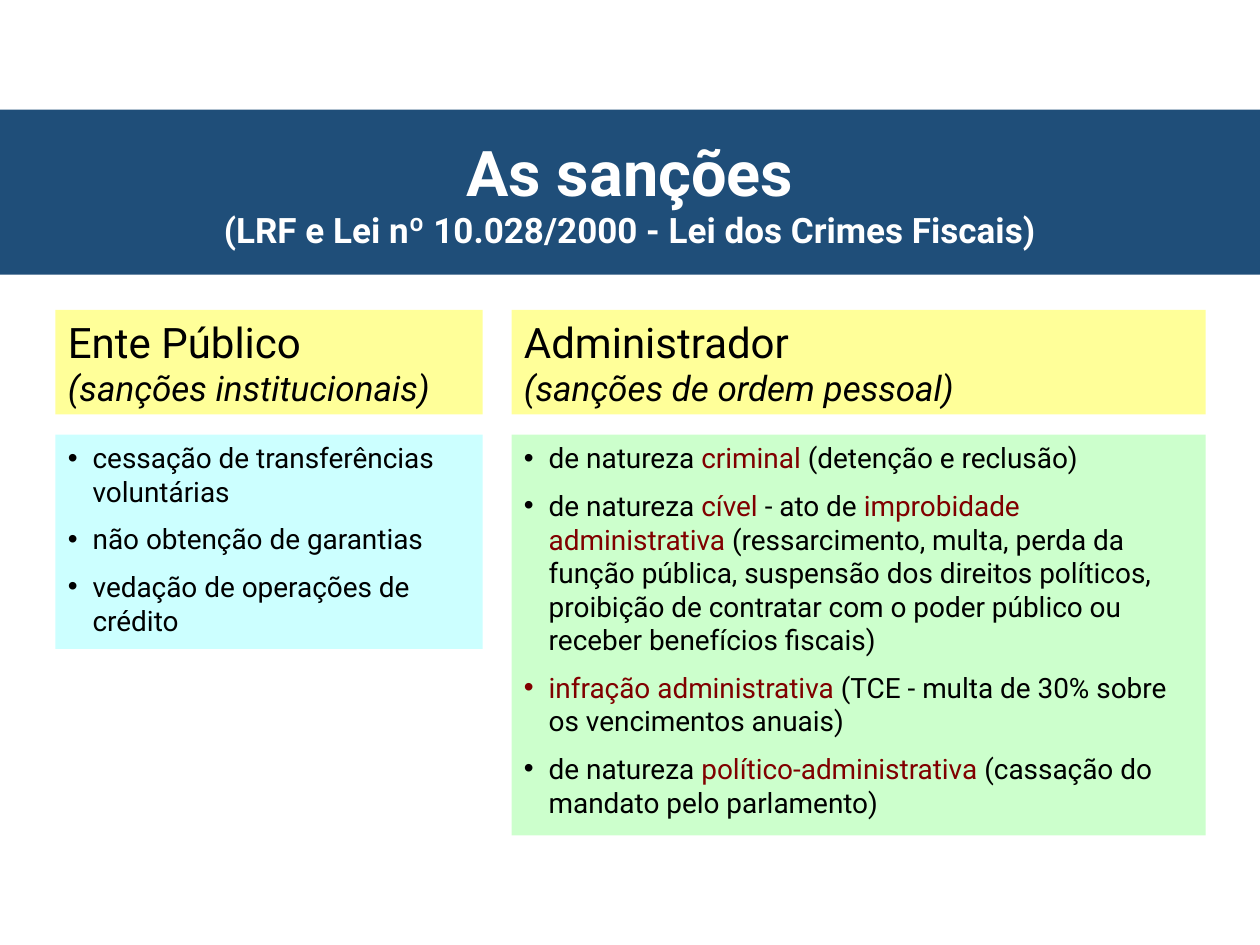
"""Build a slide on the sanctions for public bodies and for administrators."""
from lxml import etree
from pptx import Presentation
from pptx import util as u
from pptx.dml.color import RGBColor
from pptx.enum import shapes, text
from pptx.oxml.ns import qn

FONT = "Roboto"
COLORS = {
    "banner": "1F4E79", "heading": "FFFF99", "institutional": "CCFFFF",
    "personal": "CCFFCC", "text": "000000", "emphasis": "800000", "title": "FFFFFF",
}
SLIDE_WIDTH, SLIDE_HEIGHT = 720, 540
BANNER_TOP, BANNER_HEIGHT = 62.64, 94.32
HEADING_TOP, HEADING_HEIGHT = 177.12, 59.76
LIST_TOP = 248.4
INDENT, ITEM_GAP = 14.17, 8

TITLE = [("As sanções", 36), ("(LRF e Lei nº 10.028/2000 - Lei dos Crimes Fiscais)", 20)]
COLUMNS = [
    {
        "left": 31.68, "width": 244.08, "list_height": 122.4, "fill": "institutional",
        "heading": "Ente Público", "subheading": "(sanções institucionais)",
        "items": [
            [("cessação de transferências voluntárias", "text")],
            [("não obtenção de garantias", "text")],
            [("vedação de operações de crédito", "text")],
        ],
    },
    {
        "left": 292.32, "width": 396.72, "list_height": 228.96, "fill": "personal",
        "heading": "Administrador", "subheading": "(sanções de ordem pessoal)",
        "items": [
            [("de natureza ", "text"), ("criminal", "emphasis"),
             (" (detenção e reclusão)", "text")],
            [("de natureza ", "text"), ("cível", "emphasis"), (" - ato de ", "text"),
             ("improbidade administrativa", "emphasis"),
             (" (ressarcimento, multa, perda da função pública, suspensão dos direitos "
              "políticos, proibição de contratar com o poder público ou receber "
              "benefícios fiscais)", "text")],
            [("infração administrativa", "emphasis"),
             (" (TCE - multa de 30% sobre os vencimentos anuais)", "text")],
            [("de natureza ", "text"), ("político-administrativa", "emphasis"),
             (" (cassação do mandato pelo parlamento)", "text")],
        ],
    },
]


def add_panel(slide, left, top, width, height, fill, anchor=text.MSO_ANCHOR.TOP):
    shape = slide.shapes.add_shape(
        shapes.MSO_SHAPE.RECTANGLE, u.Pt(left), u.Pt(top), u.Pt(width), u.Pt(height))
    shape.shadow.inherit = False
    shape.fill.solid()
    shape.fill.fore_color.rgb = RGBColor.from_string(COLORS[fill])
    shape.line.fill.background()
    shape.text_frame.word_wrap = True
    shape.text_frame.vertical_anchor = anchor
    return shape.text_frame


def add_paragraph(frame, index, alignment=text.PP_ALIGN.LEFT):
    paragraph = frame.add_paragraph() if index else frame.paragraphs[0]
    paragraph.alignment = alignment
    return paragraph


def add_run(paragraph, words, size, color, bold=False, italic=False):
    run = paragraph.add_run()
    run.text = words
    run.font.name = FONT
    run.font.size = u.Pt(size)
    run.font.bold = bold
    run.font.italic = italic
    run.font.color.rgb = RGBColor.from_string(COLORS[color])


def add_bullet(paragraph):
    properties = paragraph._p.get_or_add_pPr()
    properties.set("marL", str(u.Pt(INDENT)))
    properties.set("indent", str(-u.Pt(INDENT)))
    etree.SubElement(properties, qn("a:buFont")).set("typeface", "Arial")
    etree.SubElement(properties, qn("a:buChar")).set("char", "•")


def add_column(slide, column):
    left, width = column["left"], column["width"]
    items = add_panel(slide, left, LIST_TOP, width, column["list_height"], column["fill"])
    for index, runs in enumerate(column["items"]):
        paragraph = add_paragraph(items, index)
        if index:
            paragraph.space_before = u.Pt(ITEM_GAP)
        add_bullet(paragraph)
        for words, color in runs:
            add_run(paragraph, words, 16, color)
    heading = add_panel(slide, left, HEADING_TOP, width, HEADING_HEIGHT, "heading")
    add_run(add_paragraph(heading, 0), column["heading"], 24, "text")
    add_run(add_paragraph(heading, 1), column["subheading"], 20, "text", italic=True)


def main():
    presentation = Presentation()
    presentation.slide_width = u.Pt(SLIDE_WIDTH)
    presentation.slide_height = u.Pt(SLIDE_HEIGHT)
    slide = presentation.slides.add_slide(presentation.slide_layouts[6])
    for column in COLUMNS:
        add_column(slide, column)
    banner = add_panel(slide, 0, BANNER_TOP, SLIDE_WIDTH, BANNER_HEIGHT, "banner",
                       text.MSO_ANCHOR.MIDDLE)
    for index, (words, size) in enumerate(TITLE):
        paragraph = add_paragraph(banner, index, text.PP_ALIGN.CENTER)
        add_run(paragraph, words, size, "title", bold=True)
    presentation.save("out.pptx")


if __name__ == "__main__":
    main()
